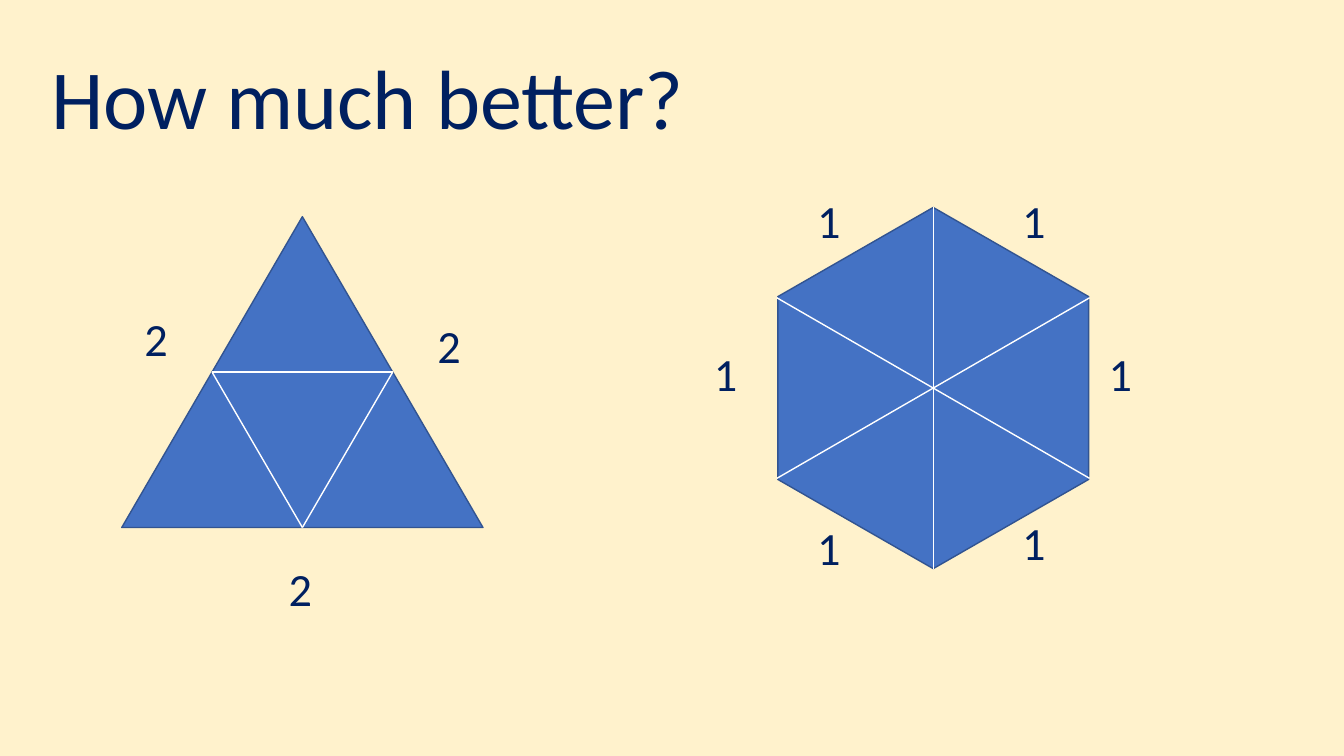
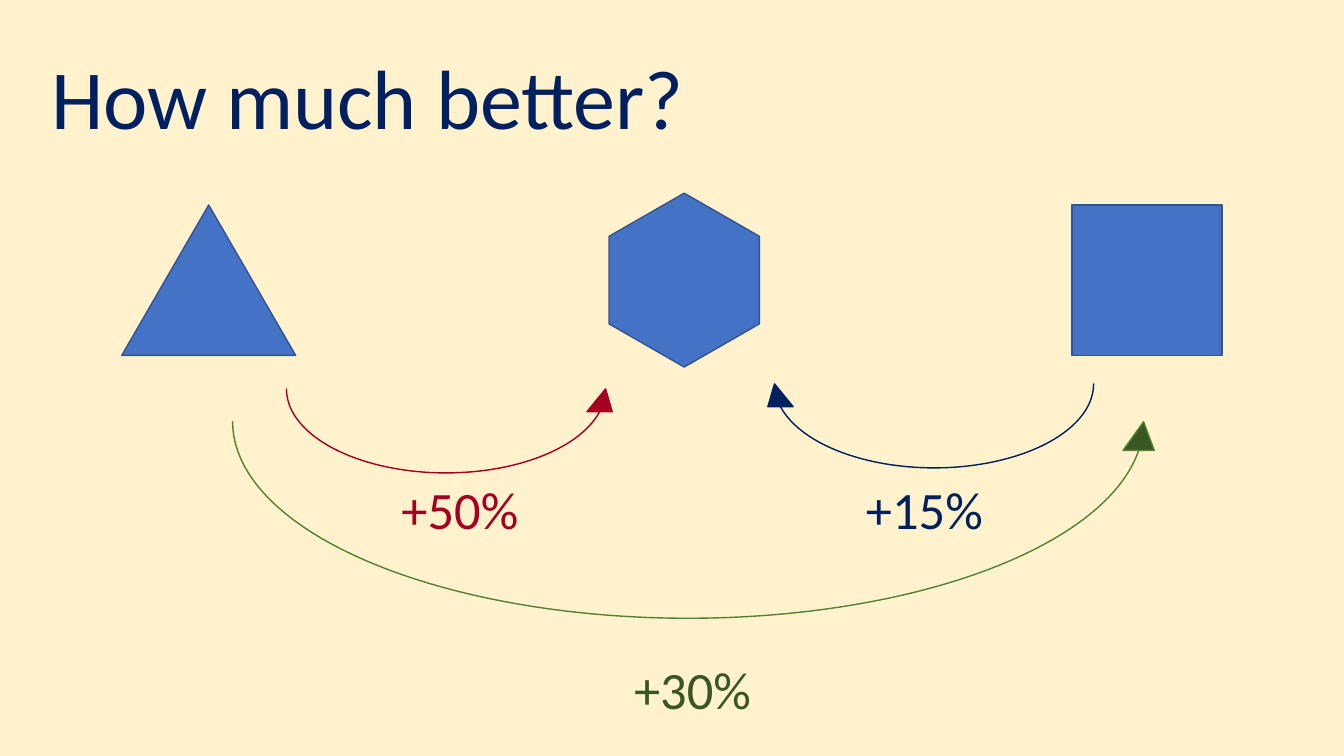
from dataclasses import dataclass
from math import cos, pi, sin
from typing import NamedTuple

from lxml.etree import SubElement
from pptx import Presentation
from pptx.dml.color import RGBColor as Color
from pptx.enum.shapes import MSO_CONNECTOR as Link, MSO_SHAPE as Kind
from pptx.enum.text import MSO_ANCHOR as Anchor
from pptx.oxml.ns import qn
from pptx.shapes.autoshape import Shape
from pptx.slide import Slide
from pptx.util import Emu, Pt

COLS, ROWS = 160, 90
CELL = 76200


@dataclass(frozen=True)
class Theme:
    font: str = "Calibri"
    cream: str = "FFF2CC"
    navy: str = "002060"
    blue: str = "4472C4"
    edge: str = "325491"
    white: str = "FFFFFF"
    red: str = "A50021"
    green: str = "385723"
    leaf: str = "548235"
    head: float = 60
    gain: float = 37.5
    side: float = 33
    rule: float = 1


class Box(NamedTuple):
    col: float
    row: float
    wide: float
    high: float


class Point(NamedTuple):
    col: float
    row: float


class Side(NamedTuple):
    text: str
    col: float
    row: float


class Gain(NamedTuple):
    text: str
    spot: Point
    arc: Box
    bend: tuple[float, float, float]
    ink: str
    edge: str
    flip: bool = False


THEME = Theme()
HEAD = Box(4.9, -3.5, 153.2, 31.3)
HEX_CUT = 0.287

LEFT = Box(14.5, 25.8, 43, 37)
RIGHT = Box(89.6, 27.7, 43, 37)
SIDES = (
    Side("1", 96.1, 23.9),
    Side("1", 120.5, 23.9),
    Side("1", 130.8, 42.1),
    Side("1", 96.1, 62.9),
    Side("1", 120.5, 62.2),
    Side("1", 83.8, 42.1),
    Side("2", 16, 38),
    Side("2", 50.9, 38.8),
    Side("2", 33.2, 67.7),
)

TOP, WIDE, HIGH = 24.4, 20.7, 17.9
SHORT = (0, 0.301, 0.272)
LONG = (0, 0.159, 0.146)
GAINS = (
    Gain("+50%", Point(46.6, 55.2), Box(34.1, 46.3, 39.5, 10), SHORT, THEME.red, THEME.red),
    Gain("+15%", Point(101.9, 55.2), Box(90.7, 45.7, 39.5, 10), SHORT, THEME.navy, THEME.navy, True),
    Gain("+30%", Point(74.3, 76.6), Box(27.7, 50.2, 110.3, 23.4), LONG, THEME.green, THEME.leaf),
)


def span(cells: float) -> Emu:
    return Emu(round(cells * CELL))


def write(page: Slide, text: str, box: Box, size: float, ink: str, pitch: float = 0.7) -> None:
    frame = page.shapes.add_textbox(*map(span, box)).text_frame
    frame.word_wrap = True
    frame.vertical_anchor = Anchor.MIDDLE
    para = frame.paragraphs[0]
    para.text = text
    para.line_spacing = pitch
    para.font.name = THEME.font
    para.font.size = Pt(size)
    para.font.color.rgb = Color.from_string(ink)


def draw(page: Slide, kind: Kind, box: Box, fill: str = THEME.blue, edge: str = THEME.edge) -> Shape:
    shape = page.shapes.add_shape(kind, *map(span, box))
    shape.shadow.inherit = False
    shape.fill.solid()
    shape.fill.fore_color.rgb = Color.from_string(fill)
    shape.line.color.rgb = Color.from_string(edge)
    shape.line.width = Pt(THEME.rule)
    return shape


def draw_hex(page: Slide, box: Box) -> None:
    shape = draw(page, Kind.HEXAGON, box)
    shape.adjustments[0] = HEX_CUT
    shape.rotation = 90


def draw_line(page: Slide, start: Point, end: Point) -> None:
    line = page.shapes.add_connector(Link.STRAIGHT, *map(span, start + end))
    line.line.color.rgb = Color.from_string(THEME.white)
    line.line.width = Pt(THEME.rule)
    SubElement(line.element.spPr, qn("a:effectLst"))


def split_hex(page: Slide, box: Box) -> None:
    mid = Point(box.col + box.wide / 2, box.row + box.high / 2)
    reach = box.wide / 2
    for turn in (pi / 2, pi / 6, 5 * pi / 6):
        across, down = reach * cos(turn), reach * sin(turn)
        draw_line(page, Point(mid.col - across, mid.row - down),
                  Point(mid.col + across, mid.row + down))


def split_tri(page: Slide, box: Box) -> None:
    half = box.row + box.high / 2
    west = Point(box.col + box.wide / 4, half)
    east = Point(box.col + box.wide * 3 / 4, half)
    base = Point(box.col + box.wide / 2, box.row + box.high)
    for start, end in ((west, east), (east, base), (west, base)):
        draw_line(page, start, end)


def draw_gain(page: Slide, gain: Gain) -> None:
    arc = draw(page, Kind.CURVED_UP_ARROW, gain.arc, gain.ink, gain.edge)
    for slot, value in enumerate(gain.bend):
        arc.adjustments[slot] = value
    if gain.flip:
        arc.element.spPr.get_or_add_xfrm().set("flipH", "1")
    write(page, gain.text, Box(*gain.spot, 17.2, 12.5), THEME.gain, gain.ink)


def add_page(deck) -> Slide:
    page = deck.slides.add_slide(deck.slide_layouts[6])
    page.background.fill.solid()
    page.background.fill.fore_color.rgb = Color.from_string(THEME.cream)
    write(page, "How much better?", HEAD, THEME.head, THEME.navy, 0.9)
    return page


def show_sides(page: Slide) -> None:
    draw(page, Kind.ISOSCELES_TRIANGLE, LEFT)
    draw_hex(page, RIGHT)
    for side in SIDES:
        write(page, side.text, Box(side.col, side.row, 5.5, 6.2), THEME.side, THEME.navy)
    split_hex(page, RIGHT)
    split_tri(page, LEFT)


def show_gains(page: Slide) -> None:
    draw(page, Kind.RECTANGLE, Box(127.6, TOP, HIGH, HIGH))
    draw(page, Kind.ISOSCELES_TRIANGLE, Box(14.5, TOP, WIDE, HIGH))
    draw_hex(page, Box(71.1, TOP, WIDE, HIGH))
    for gain in GAINS:
        draw_gain(page, gain)


def main() -> None:
    deck = Presentation()
    deck.slide_width, deck.slide_height = span(COLS), span(ROWS)
    for show in (show_sides, show_gains):
        show(add_page(deck))
    deck.save("out.pptx")


if __name__ == "__main__":
    main()
